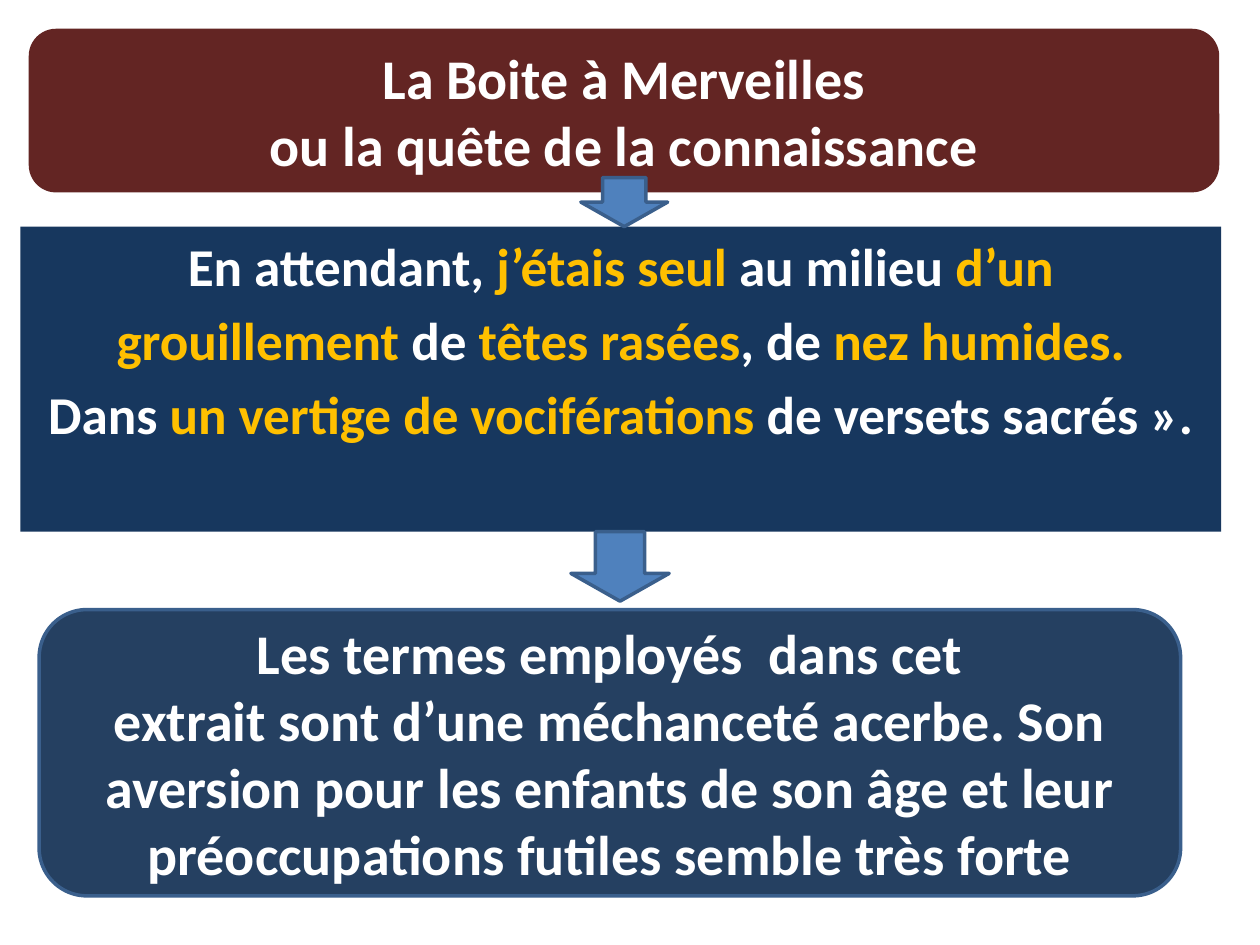
import pptx
import pptx.dml.color
import pptx.enum.shapes
import pptx.enum.text
import pptx.util

Cm = pptx.util.Cm
Pt = pptx.util.Pt
SHAPES = pptx.enum.shapes.MSO_SHAPE
ANCHORS = pptx.enum.text.MSO_ANCHOR

WHITE = "FFFFFF"
GOLD = "FFC000"
MAROON = "632523"
NAVY = "17375E"
SLATE = "254061"
BLUE = "4F81BD"
OUTLINE = "3A5F8C"

TITLE_BOX = (0.58, 0.58, 24, 3.3)
TITLE = [
    [("La Boite à Merveilles", WHITE)],
    [("ou la quête de la connaissance", WHITE)],
]
QUOTE = [
    [("En attendant, ", WHITE), ("j’étais seul ", GOLD),
     ("au milieu ", WHITE), ("d’un", GOLD)],
    [("grouillement ", GOLD), ("de ", WHITE), ("têtes rasées", GOLD),
     (", de ", WHITE), ("nez humides.", GOLD)],
    [("Dans ", WHITE), ("un vertige de vociférations", GOLD),
     (" de versets sacrés ».", WHITE)],
]
CONCLUSION = [
    [("Les termes employés  dans cet", WHITE)],
    [("extrait sont d’une méchanceté acerbe. Son aversion pour les enfants "
      "de son âge et leur préoccupations futiles semble très forte", WHITE)],
]


def color(hex_value):
    return pptx.dml.color.RGBColor.from_string(hex_value)


def add_box(slide, kind, box, fill, outline=None):
    shape = slide.shapes.add_shape(kind, *map(Cm, box))
    shape.shadow.inherit = False
    shape.fill.solid()
    shape.fill.fore_color.rgb = color(fill)
    if outline:
        shape.line.color.rgb = color(outline)
        shape.line.width = Pt(2)
    else:
        shape.line.fill.background()
    return shape


def write_text(shape, paragraphs, size, anchor, space_before=0):
    """Fill a shape with centred bold paragraphs of (text, colour) pieces."""
    frame = shape.text_frame
    frame.word_wrap = True
    frame.auto_size = pptx.enum.text.MSO_AUTO_SIZE.NONE
    frame.vertical_anchor = anchor
    for index, pieces in enumerate(paragraphs):
        paragraph = frame.add_paragraph() if index else frame.paragraphs[0]
        paragraph.alignment = pptx.enum.text.PP_ALIGN.CENTER
        paragraph.space_before = Pt(space_before if index else 0)
        for text, hex_value in pieces:
            run = paragraph.add_run()
            run.text = text
            run.font.name = "Calibri"
            run.font.size = Pt(size)
            run.font.bold = True
            run.font.color.rgb = color(hex_value)


def add_title(slide):
    """Place the title over a rounded panel."""
    panel = add_box(slide, SHAPES.ROUNDED_RECTANGLE, TITLE_BOX, MAROON)
    title = slide.shapes.title
    title.left, title.top, title.width, title.height = map(Cm, TITLE_BOX)
    write_text(title, TITLE, 32, ANCHORS.MIDDLE)
    panel.element.addnext(title.element)


def add_arrow(slide, box, head_ratio=0.5):
    arrow = add_box(slide, SHAPES.DOWN_ARROW, box, BLUE, OUTLINE)
    arrow.adjustments[1] = head_ratio


def main():
    presentation = pptx.Presentation()
    presentation.slide_width = Cm(25.4)
    presentation.slide_height = Cm(19.05)
    slide = presentation.slides.add_slide(presentation.slide_layouts[5])

    add_title(slide)
    quote = add_box(slide, SHAPES.RECTANGLE, (0.41, 4.57, 24.21, 6.15), NAVY)
    write_text(quote, QUOTE, 30.4, ANCHORS.TOP, space_before=6)
    add_arrow(slide, (11.71, 3.58, 1.75, 0.99))
    add_arrow(slide, (11.51, 10.72, 1.98, 1.4), head_ratio=0.4)
    conclusion = add_box(slide, SHAPES.ROUNDED_RECTANGLE,
                         (0.79, 12.29, 23.01, 5.77), SLATE, OUTLINE)
    write_text(conclusion, CONCLUSION, 32, ANCHORS.MIDDLE)

    presentation.save("out.pptx")


if __name__ == "__main__":
    main()
